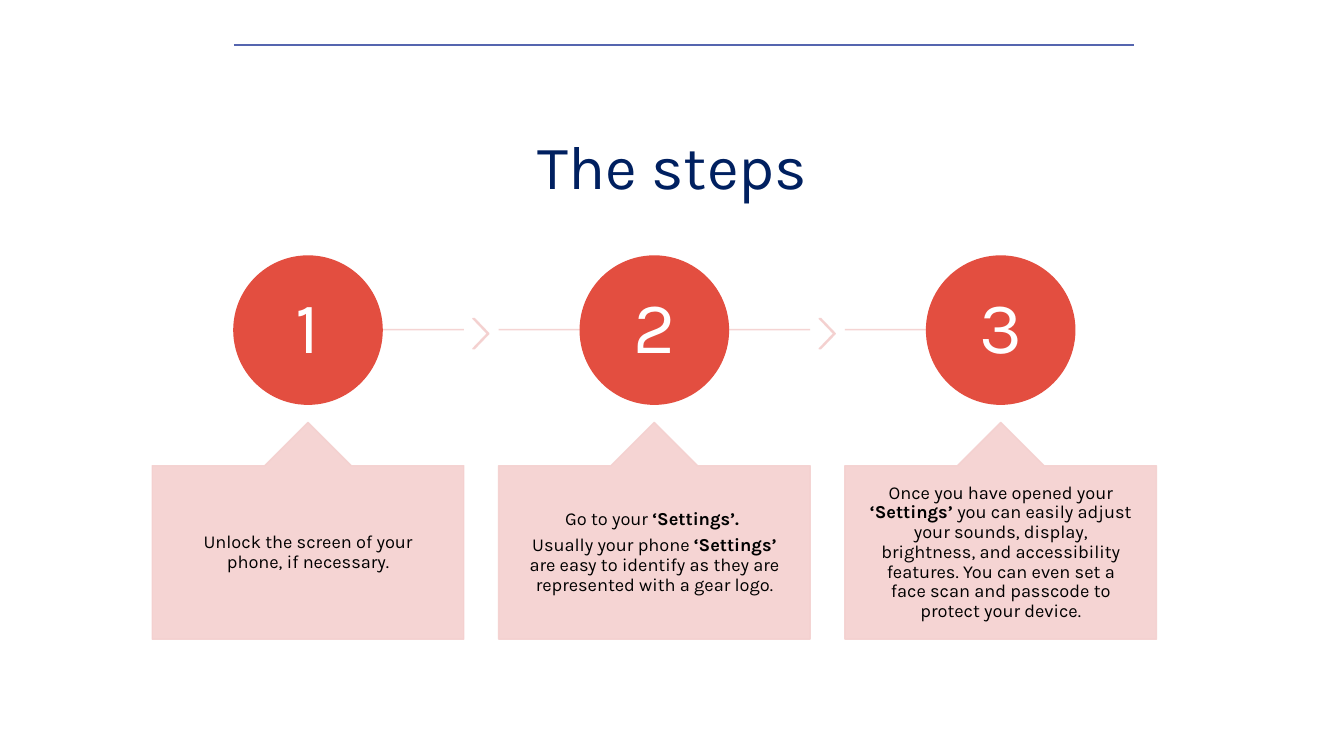
from lxml.etree import SubElement
from pptx import Presentation
from pptx.dml.color import RGBColor
from pptx.enum.shapes import MSO_CONNECTOR as Link, MSO_SHAPE as Kind
from pptx.enum.text import MSO_ANCHOR as Anchor, PP_ALIGN as Align
from pptx.oxml.ns import qn
from pptx.util import Inches, Pt

NAVY = RGBColor(0x00, 0x20, 0x60)
BLUE = RGBColor(0x55, 0x65, 0xAF)
RED = RGBColor(0xE3, 0x4E, 0x40)
PINK = RGBColor(0xF4, 0xD0, 0xCF)
WHITE = RGBColor(0xFF, 0xFF, 0xFF)
BLACK = RGBColor(0x00, 0x00, 0x00)

FONT = "Karla"
LEFT, PITCH, WIDTH = 1.51, 3.435, 3.09
DISC = 1.47
RAIL = 3.27

STEPS = [
    [[("Unlock the screen of your phone, if necessary.", False)]],
    [
        [("Go to your ", False), ("‘Settings’. ", True)],
        [
            ("Usually your phone ", False),
            ("‘Settings’ ", True),
            ("are easy to identify as they are represented with a gear logo.", False),
        ],
    ],
    [
        [
            ("Once you have opened your ", False),
            ("‘Settings’ ", True),
            (
                "you can easily adjust your sounds, display, brightness, and "
                "accessibility features. You can even set a face scan and "
                "passcode to protect your device.",
                False,
            ),
        ]
    ],
]


def fade(part):
    for color in part.iter(qn("a:srgbClr")):
        SubElement(color, qn("a:alpha"), val="90000")


def add_line(slide, start, end, top, color, width):
    line = slide.shapes.add_connector(
        Link.STRAIGHT, Inches(start), Inches(top), Inches(end), Inches(top)
    )
    line.line.color.rgb = color
    line.line.width = Pt(width)
    SubElement(line._element.spPr, qn("a:effectLst"))
    return line


def add_form(slide, kind, box, color, adjust=()):
    form = slide.shapes.add_shape(kind, *map(Inches, box))
    form.shadow.inherit = False
    form.fill.solid()
    form.fill.fore_color.rgb = color
    form.line.color.rgb = color
    form.line.width = Pt(1)
    for spot, value in enumerate(adjust):
        form.adjustments[spot] = value
    return form


def add_text(slide, box, paras, size, color, pad, anchor=Anchor.MIDDLE, after=0):
    frame = slide.shapes.add_textbox(*map(Inches, box)).text_frame
    frame.word_wrap = True
    frame.vertical_anchor = anchor
    frame.margin_left = frame.margin_right = Inches(pad[0])
    frame.margin_top = frame.margin_bottom = Inches(pad[1])
    for spot, runs in enumerate(paras):
        para = frame.add_paragraph() if spot else frame.paragraphs[0]
        para.alignment = Align.CENTER
        para.line_spacing = 0.9
        para.space_after = Pt(after)
        para.font.name = FONT
        para.font.size = Pt(size)
        para.font.color.rgb = color
        for words, bold in runs:
            run = para.add_run()
            run.text = words
            if bold:
                run.font.bold = True


def add_step(slide, spot, paras):
    left = LEFT + spot * PITCH
    right = left + WIDTH
    mid = left + WIDTH / 2
    last = len(STEPS) - 1
    start = left if spot else mid + 0.17
    end = right if spot < last else mid
    fade(add_line(slide, start, end, RAIL, PINK, 1)._element)
    if spot < last:
        arrow = add_form(
            slide, Kind.CHEVRON, (right + 0.09, 3.16, 0.16, 0.3), PINK, [0.9]
        )
        fade(arrow._element)
    add_form(slide, Kind.OVAL, (mid - DISC / 2, 2.54, DISC, DISC), RED)
    add_text(
        slide, (mid - 0.52, 2.75, 1.04, 1.04), [[(str(spot + 1), False)]],
        52, WHITE, (0.06, 0.06),
    )
    card = add_form(
        slide, Kind.UP_ARROW_CALLOUT, (left, 4.19, WIDTH, 2.15), PINK,
        [0.5, 0.2, 0.2, 1],
    )
    fade(card._element)
    add_text(
        slide, (left, 4.62, WIDTH, 1.72), paras, 13, BLACK, (0.24, 0.18), after=4.55
    )


def main():
    deck = Presentation()
    deck.slide_width = Inches(13.33)
    deck.slide_height = Inches(7.5)
    slide = deck.slides.add_slide(deck.slide_layouts[6])
    add_line(slide, 2.32, 11.25, 0.45, BLUE, 1.5)
    for spot, paras in enumerate(STEPS):
        add_step(slide, spot, paras)
    add_text(
        slide, (0.92, 0.81, 11.5, 1.25), [[("The steps", False)]],
        44, NAVY, (0.1, 0.05), Anchor.BOTTOM,
    )
    deck.save("out.pptx")


if __name__ == "__main__":
    main()
